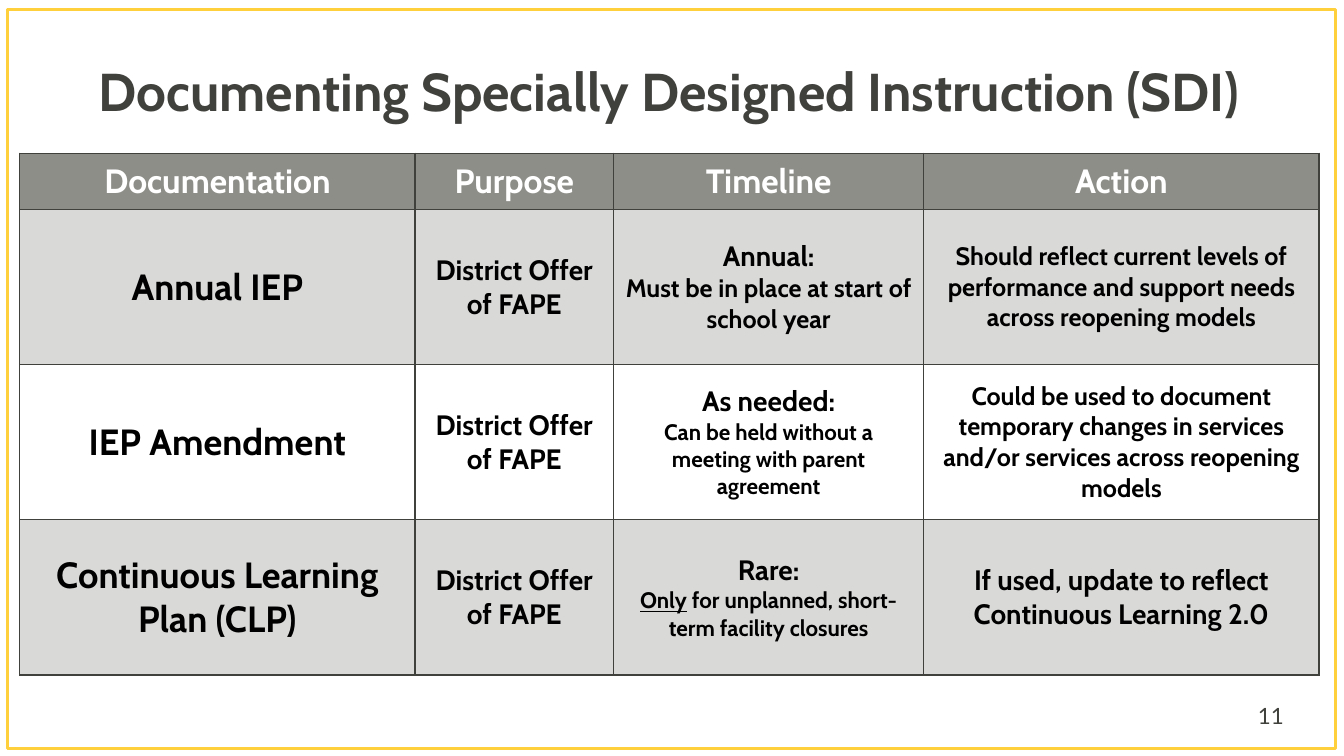
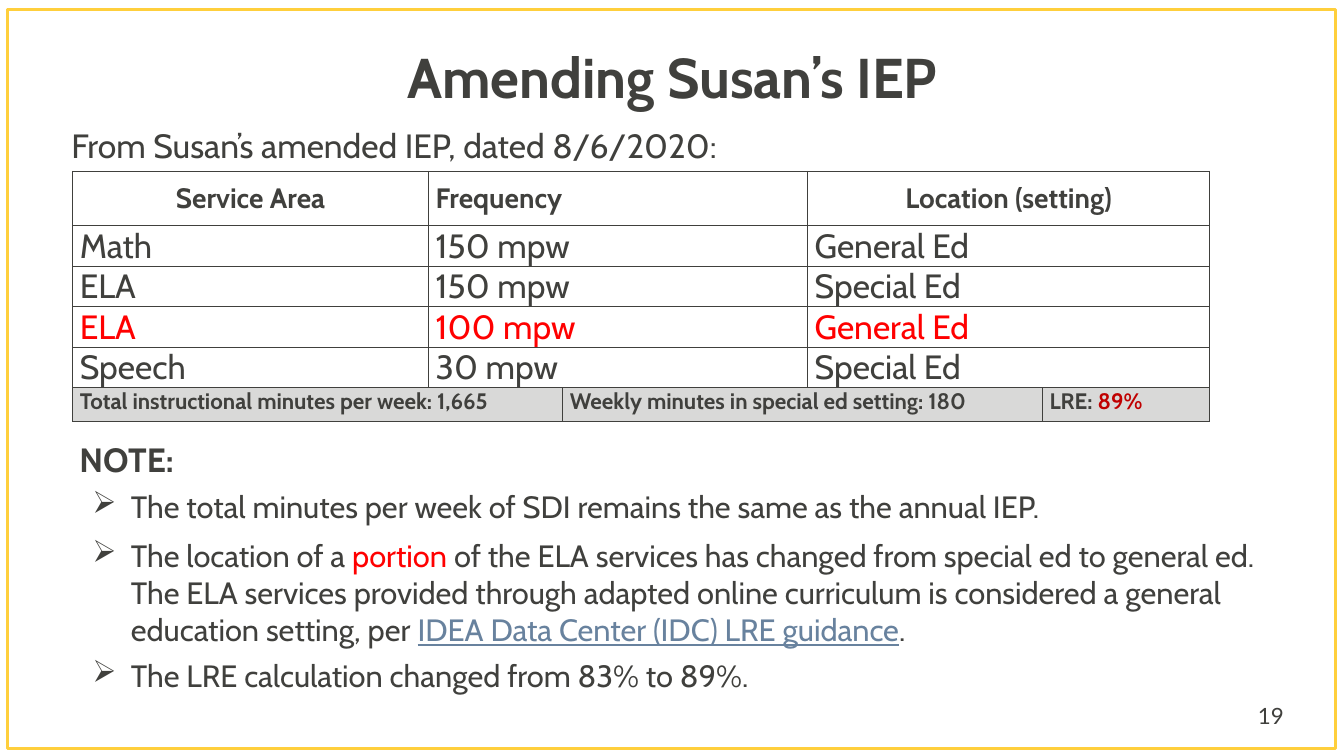
from dataclasses import dataclass

from lxml.etree import SubElement
from pptx import Presentation
from pptx.dml.color import RGBColor
from pptx.enum.shapes import MSO_SHAPE
from pptx.enum.text import MSO_ANCHOR, PP_ALIGN
from pptx.oxml.ns import qn
from pptx.util import Cm, Pt


@dataclass(frozen=True)
class Theme:
    ink: str = "40403D"
    black: str = "000000"
    white: str = "FFFFFF"
    gold: str = "FFCF3C"
    header: str = "8E8E89"
    band: str = "D9D9D8"
    red: str = "FF0000"
    dark_red: str = "C00000"
    link: str = "68829E"
    font: str = "Cabin"
    number_font: str = "Lato"
    label: int = 26
    lead: int = 24
    note: int = 22
    body: int = 20
    detail: int = 18
    small: int = 16


THEME = Theme()
LEFT, CENTER = PP_ALIGN.LEFT, PP_ALIGN.CENTER


@dataclass
class Row:
    height: float
    cells: list
    format: dict
    fill: str = ""
    spans: tuple = (1, 1, 1, 1)
    aligns: tuple = (CENTER,) * 4
    anchor: MSO_ANCHOR = MSO_ANCHOR.MIDDLE


# Content: a text is a list of paragraphs, a paragraph a list of (words, format) runs
def sized(words, size):
    return [(words, {"size": size})]


OFFER = [sized("District Offer", THEME.body), sized("of FAPE", THEME.body)]

DOCUMENTS = [
    ([sized("Annual IEP", THEME.label)], OFFER,
     [sized("Annual:", THEME.body),
      sized("Must be in place at start of school year", THEME.detail)],
     [sized("Should reflect current levels of performance and support needs "
            "across reopening models", THEME.detail)]),
    ([sized("IEP Amendment", THEME.label)], OFFER,
     [sized("As needed:", THEME.body),
      sized("Can be held without a meeting with parent agreement", THEME.small)],
     [sized("Could be used to document temporary changes in services and/or "
            "services across reopening models", THEME.detail)]),
    ([sized("Continuous Learning Plan (CLP)", THEME.label)], OFFER,
     [sized("Rare:", THEME.body),
      [("Only", {"size": THEME.small, "underline": True}),
       (" for unplanned, short-term facility closures", {"size": THEME.small})]],
     [sized("If used, update to reflect Continuous Learning 2.0", THEME.body)]),
]
DOCUMENT_HEADINGS = ["Documentation", "Purpose", "Timeline", "Action"]
DOCUMENT_WIDTHS = [9.96, 5, 7.82, 9.96]

SERVICE_HEADINGS = ["Service Area", "Frequency", "Location (setting)"]
SERVICES = [
    ("Math", "150 mpw", "General Ed", THEME.ink),
    ("ELA", "150 mpw", "Special Ed", THEME.ink),
    ("ELA", "100 mpw", "General Ed", THEME.red),
    ("Speech", "30 mpw", "Special Ed", THEME.ink),
]
TOTALS = [
    "Total instructional minutes per week: 1,665",
    "Weekly minutes in special ed setting: 180",
    [[("LRE: ", {}), ("89%", {"color": THEME.dark_red})]],
]
SERVICE_WIDTHS = [8.97, 3.38, 6.17, 5.92, 4.22]

# Each note: runs, space after, bulleted
NOTES = [
    ([("NOTE:", {"size": THEME.lead, "bold": True})], 6, False),
    ([("The total minutes per week of SDI remains the same as the annual IEP.", {})],
     9, True),
    ([("The location of a ", {}),
      ("portion", {"color": THEME.red}),
      (" of the ELA services has changed from special ed to general ed. The ELA "
       "services provided through adapted online curriculum is considered a general "
       "education setting, per ", {}),
      ("IDEA Data Center (IDC) LRE guidance", {"color": THEME.link, "underline": True}),
      (".", {})], 6, True),
    ([("The LRE calculation changed from 83% to 89%.", {})], 6, True),
]


# Text
def format_run(run, size=THEME.body, color=THEME.ink, font=THEME.font,
               bold=False, underline=False):
    run.font.size = Pt(size)
    run.font.name = font
    run.font.bold = bold
    run.font.underline = underline
    run.font.color.rgb = RGBColor.from_string(color)


def write_text(frame, text, align=LEFT, spacing=1.0, **format):
    """Write a plain string or a list of paragraphs; runs may override the format."""
    paragraphs = [[(text, {})]] if isinstance(text, str) else text
    for index, runs in enumerate(paragraphs):
        paragraph = frame.add_paragraph() if index else frame.paragraphs[0]
        paragraph.alignment = align
        paragraph.line_spacing = spacing
        for words, override in runs:
            run = paragraph.add_run()
            run.text = words
            format_run(run, **{**format, **override})


def add_text(slide, box, text, **format):
    frame = slide.shapes.add_textbox(*map(Cm, box)).text_frame
    frame.word_wrap = True
    frame.vertical_anchor = MSO_ANCHOR.MIDDLE
    write_text(frame, text, **format)
    return frame


def add_bullet(paragraph):
    properties = paragraph._p.get_or_add_pPr()
    properties.set("marL", str(Cm(1.3)))
    properties.set("indent", str(Cm(-0.97)))
    SubElement(properties, qn("a:buChar"), char="➢")


# Tables
def add_borders(cell):
    properties = cell._tc.get_or_add_tcPr()
    for side in ("a:lnL", "a:lnR", "a:lnT", "a:lnB"):
        line = SubElement(properties, qn(side), w=str(Pt(1)))
        SubElement(SubElement(line, qn("a:solidFill")), qn("a:srgbClr"), val=THEME.ink)


def add_grid(slide, left, top, widths, rows, margins):
    heights = [row.height for row in rows]
    table = slide.shapes.add_table(
        len(rows), len(widths), Cm(left), Cm(top),
        Cm(sum(widths)), Cm(sum(heights))).table
    table.first_row = table.horz_banding = False
    for column, width in zip(table.columns, widths):
        column.width = Cm(width)
    for index, row in enumerate(rows):
        table.rows[index].height = Cm(row.height)
        for column in range(len(widths)):
            cell = table.cell(index, column)
            add_borders(cell)
            if row.fill:
                cell.fill.solid()
                cell.fill.fore_color.rgb = RGBColor.from_string(row.fill)
            else:
                cell.fill.background()
        column = 0
        for text, span, align in zip(row.cells, row.spans, row.aligns):
            cell = table.cell(index, column)
            if span > 1:
                cell.merge(table.cell(index, column + span - 1))
            cell.vertical_anchor = row.anchor
            cell.margin_left = cell.margin_right = Cm(margins[0])
            cell.margin_top = cell.margin_bottom = Cm(margins[1])
            write_text(cell.text_frame, text, align=align, **row.format)
            column += span


# Shared slide parts
def add_slide(presentation, title, title_box, title_size, number):
    slide = presentation.slides.add_slide(presentation.slide_layouts[6])
    border = slide.shapes.add_shape(
        MSO_SHAPE.RECTANGLE, Cm(0.18), Cm(0.23), Cm(33.48), Cm(18.64))
    border.shadow.inherit = False
    border.fill.background()
    border.line.color.rgb = RGBColor.from_string(THEME.gold)
    border.line.width = Pt(2.25)
    add_text(slide, title_box, title, align=CENTER, spacing=0.9,
             size=title_size, bold=True)
    add_text(slide, (31.45, 17.53, 1.78, 1.02), number,
             size=THEME.small, font=THEME.number_font)
    return slide


# Slides
def build_documentation(presentation):
    slide = add_slide(presentation, "Documenting Specially Designed Instruction (SDI)",
                      (0.48, 1.02, 32.77, 2.69), 38, "11")
    rows = [Row(1.42, DOCUMENT_HEADINGS,
                {"size": THEME.lead, "color": THEME.white, "bold": True}, THEME.header)]
    for index, cells in enumerate(DOCUMENTS):
        rows.append(Row(3.91, cells, {"color": THEME.black, "bold": True},
                        "" if index % 2 else THEME.band))
    add_grid(slide, 0.5, 3.86, DOCUMENT_WIDTHS, rows, (0.25, 0.13))


def build_amendment(presentation):
    slide = add_slide(presentation, "Amending Susan’s IEP",
                      (2.34, 1.02, 29.21, 2.01), 40, "19")
    add_text(slide, (1.55, 3.02, 27.51, 1.27),
             "From Susan’s amended IEP, dated 8/6/2020:", size=THEME.lead)

    rows = [Row(1.37, SERVICE_HEADINGS, {"bold": True}, spans=(1, 2, 2),
                aligns=(CENTER, LEFT, CENTER))]
    for *cells, color in SERVICES:
        rows.append(Row(1.02, cells, {"size": THEME.lead, "color": color},
                        spans=(1, 2, 2), aligns=(LEFT,) * 3, anchor=MSO_ANCHOR.TOP))
    rows.append(Row(0.86, TOTALS, {"size": THEME.small, "bold": True}, THEME.band,
                    spans=(2, 2, 1), aligns=(LEFT,) * 3, anchor=MSO_ANCHOR.TOP))
    add_grid(slide, 1.83, 4.32, SERVICE_WIDTHS, rows, (0.18, 0))

    frame = add_text(slide, (1.75, 10.9, 30.48, 6.73),
                     [runs for runs, _, _ in NOTES], size=THEME.note)
    for paragraph, (_, space_after, bulleted) in zip(frame.paragraphs, NOTES):
        paragraph.space_after = Pt(space_after)
        if bulleted:
            add_bullet(paragraph)


def main():
    presentation = Presentation()
    presentation.slide_width, presentation.slide_height = Cm(33.87), Cm(19.05)
    build_documentation(presentation)
    build_amendment(presentation)
    presentation.save("out.pptx")


if __name__ == "__main__":
    main()
